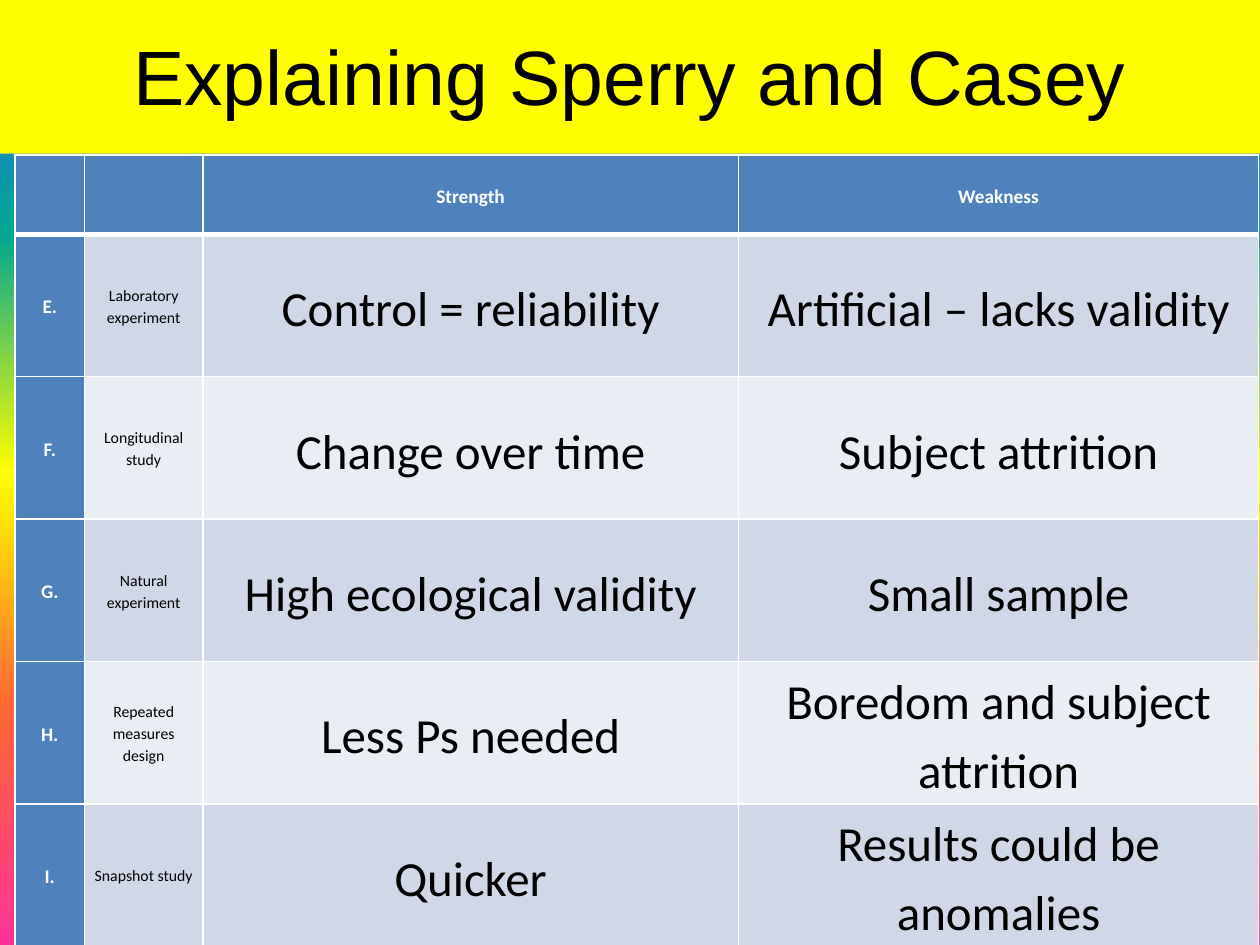
import pptx
import pptx.dml.color
import pptx.enum.text
import pptx.oxml
import pptx.oxml.ns
import pptx.util
from pptx.util import Inches

TITLE = "Explaining Sperry and Casey"
ROWS = [
    ("", "", "Strength", "Weakness"),
    ("E.", "Laboratory experiment", "Control = reliability", "Artificial – lacks validity"),
    ("F.", "Longitudinal study", "Change over time", "Subject attrition"),
    ("G.", "Natural experiment", "High ecological validity", "Small sample"),
    ("H.", "Repeated measures design", "Less Ps needed", "Boredom and subject attrition"),
    ("I.", "Snapshot study", "Quicker", "Results could be anomalies"),
]
COL_WIDTHS = [0.55, 0.94, 4.25, 4.13]
HEADER_HEIGHT, ROW_HEIGHT = 0.63, 1.13
BODY_SIZES = [11, 9, 28, 28]
RAINBOW = ["FF3399", "FF6633", "FFFF00", "01A78F", "3366FF"]
BLUE, BANDS = "4F81BD", ["D0D8E8", "E9EDF4"]
BLACK, WHITE, YELLOW = "000000", "FFFFFF", "FFFF00"
MIDDLE = pptx.enum.text.MSO_ANCHOR.MIDDLE


def rgb(color):
    return pptx.dml.color.RGBColor.from_string(color)


def a_element(xml):
    """Parse DrawingML whose root tag still lacks its namespace declaration."""
    head, rest = xml.split(" ", 1)
    return pptx.oxml.parse_xml(f"{head} {pptx.oxml.ns.nsdecls('a')} {rest}")


def paint_background(s):
    fill = s.background.fill
    fill.gradient()
    fill.gradient_angle = 90
    stops = s.element.find(".//" + pptx.oxml.ns.qn("a:gsLst"))
    for stop in list(stops):
        stops.remove(stop)
    for i, color in enumerate(RAINBOW):
        pos = 100000 * i // (len(RAINBOW) - 1)
        stops.append(a_element(f'<a:gs pos="{pos}"><a:srgbClr val="{color}"/></a:gs>'))


def write(tf, text, font, size, color, bold=False):
    p = tf.paragraphs[0]
    p.alignment = pptx.enum.text.PP_ALIGN.CENTER
    r = p.add_run()
    r.text = text
    r.font.name, r.font.size, r.font.bold = font, pptx.util.Pt(size), bold
    r.font.color.rgb = rgb(color)
    return p


def add_borders(cell, is_header, below_header):
    top, bottom = (3 if below_header else 1), (3 if is_header else 1)
    for side, width in (("L", 1), ("R", 1), ("T", top), ("B", bottom)):
        cell._tc.get_or_add_tcPr().append(a_element(
            f'<a:ln{side} w="{pptx.util.Pt(width)}"><a:solidFill>'
            f'<a:srgbClr val="{WHITE}"/></a:solidFill></a:ln{side}>'))


def fill_cell(cell, text, row, col):
    is_heading = row == 0 or col == 0
    add_borders(cell, row == 0, row == 1)
    cell.fill.solid()
    cell.fill.fore_color.rgb = rgb(BLUE if is_heading else BANDS[(row - 1) % 2])
    cell.vertical_anchor = MIDDLE
    cell.margin_left = cell.margin_right = Inches(0.07)
    cell.margin_top = cell.margin_bottom = 0
    if text:
        size = 11 if row == 0 else BODY_SIZES[col]
        p = write(cell.text_frame, text, "Calibri", size,
                  WHITE if is_heading else BLACK, is_heading)
        p.line_spacing = 1.15


def main():
    prs = pptx.Presentation()
    prs.slide_width, prs.slide_height = Inches(10), Inches(7.5)
    s = prs.slides.add_slide(prs.slide_layouts[5])
    paint_background(s)

    title = s.shapes.title
    title.left, title.top = 0, Inches(-0.03)
    title.width, title.height = Inches(10), Inches(1.25)
    title.fill.solid()
    title.fill.fore_color.rgb = rgb(YELLOW)
    title.text_frame.vertical_anchor = MIDDLE
    write(title.text_frame, TITLE, "Arial", 44, BLACK)

    heights = [HEADER_HEIGHT] + [ROW_HEIGHT] * (len(ROWS) - 1)
    table = s.shapes.add_table(
        len(ROWS), len(COL_WIDTHS), Inches(0.12), Inches(1.23),
        Inches(sum(COL_WIDTHS)), Inches(sum(heights))).table
    for column, width in zip(table.columns, COL_WIDTHS):
        column.width = Inches(width)
    for i, (height, texts) in enumerate(zip(heights, ROWS)):
        table.rows[i].height = Inches(height)
        for j, text in enumerate(texts):
            fill_cell(table.cell(i, j), text, i, j)

    prs.save("out.pptx")


if __name__ == "__main__":
    main()
